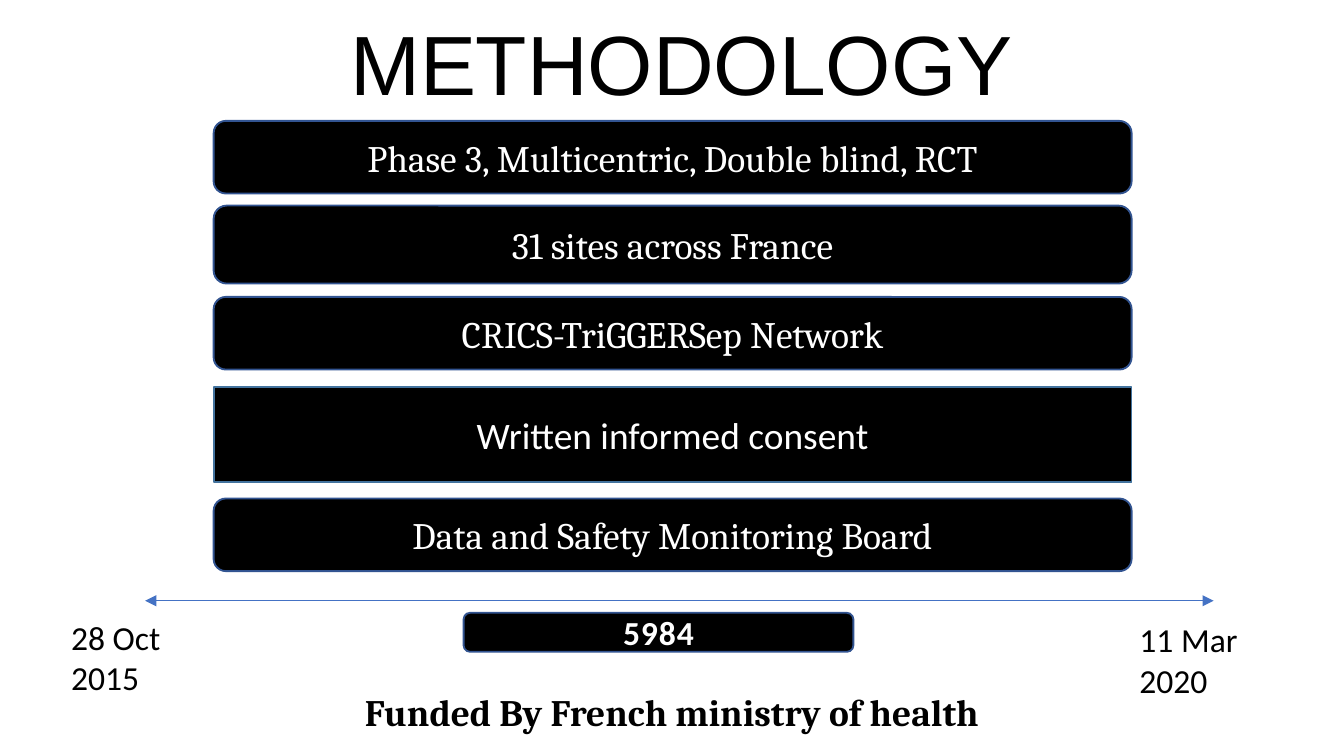
"""Build the METHODOLOGY slide of a clinical trial deck."""

from lxml.etree import SubElement
from pptx import Presentation
from pptx.dml.color import RGBColor
from pptx.enum.shapes import MSO_CONNECTOR, MSO_SHAPE
from pptx.enum.text import MSO_ANCHOR, MSO_AUTO_SIZE, PP_ALIGN
from pptx.oxml import parse_xml
from pptx.oxml.ns import nsdecls, qn
from pptx.util import Inches, Pt

COLORS = {
    "black": "000000",
    "white": "FFFFFF",
    "near_white": "FEFEFE",
    "navy": "325491",
    "steel": "43739E",
    "blue": "4472C4",
}


def write(shape, text, font, size, color, align=PP_ALIGN.CENTER, bold=False):
    """Put one formatted paragraph into a shape and return it."""
    shape.text_frame.word_wrap = True
    para = shape.text_frame.paragraphs[0]
    para.text = text
    para.alignment = align
    para.font.name = font
    para.font.size = Pt(size)
    para.font.bold = bold
    para.font.color.rgb = RGBColor.from_string(COLORS[color])
    return para


def add_bar(page, kind, left, top, width, height, line):
    """Add a black bar with a thin coloured outline."""
    bar = page.shapes.add_shape(
        kind, Inches(left), Inches(top), Inches(width), Inches(height)
    )
    bar.shadow.inherit = False
    bar.fill.solid()
    bar.fill.fore_color.rgb = RGBColor.from_string(COLORS["black"])
    bar.line.color.rgb = RGBColor.from_string(COLORS[line])
    bar.line.width = Pt(1)
    bar.text_frame.vertical_anchor = MSO_ANCHOR.MIDDLE
    return bar


deck = Presentation()
deck.slide_width = Inches(10)
deck.slide_height = Inches(10) * 9 // 16
page = deck.slides.add_slide(deck.slide_layouts[5])

title = page.shapes.title
title.left, title.top = Inches(1.32), Inches(0.07)
title.width, title.height = Inches(7.5), Inches(1.96)
frame = title.text_frame
frame.auto_size = MSO_AUTO_SIZE.NONE
frame.vertical_anchor = MSO_ANCHOR.TOP
frame.margin_left = frame.margin_right = Inches(0.1)
frame.margin_top = frame.margin_bottom = Inches(0.1)
write(title, "METHODOLOGY", "Arial", 45, "black").line_spacing = 0.9

rounded, square = MSO_SHAPE.ROUNDED_RECTANGLE, MSO_SHAPE.RECTANGLE
for text, kind, top, height, line, font in [
    ("Phase 3, Multicentric, Double blind, RCT", rounded, 0.9, 0.54, "navy", "Cambria"),
    ("31 sites across France", rounded, 1.53, 0.58, "navy", "Cambria"),
    ("CRICS-TriGGERSep Network", rounded, 2.21, 0.54, "navy", "Cambria"),
    ("Written informed consent", square, 2.88, 0.71, "steel", "Calibri"),
    ("Data and Safety Monitoring Board", rounded, 3.71, 0.54, "navy", "Cambria"),
]:
    bar = add_bar(page, kind, 1.59, top, 6.83, height, line)
    write(bar, text, font, 20, "white")

timeline = page.shapes.add_connector(
    MSO_CONNECTOR.STRAIGHT, Inches(1.08), Inches(4.47), Inches(9.03), Inches(4.47)
)
timeline.line.color.rgb = RGBColor.from_string(COLORS["blue"])
timeline.line.width = Pt(0.5)
outline = timeline.line._get_or_add_ln()
for end in ("a:headEnd", "a:tailEnd"):
    SubElement(outline, qn(end), type="triangle")
SubElement(timeline._element.spPr, qn("a:effectLst"))

for text, left, top, width, height, font, size, align, bold in [
    ("28 Oct 2015", 0.43, 4.54, 1.29, 0.34, "Calibri", 18, PP_ALIGN.LEFT, False),
    ("11 Mar 2020", 8.38, 4.56, 1.29, 0.34, "Calibri", 18, PP_ALIGN.LEFT, False),
    ("Funded By French ministry of health", 1.32, 5.08, 7.36, 0.44, "Cambria", 20,
     PP_ALIGN.CENTER, True),
]:
    box = page.shapes.add_textbox(
        Inches(left), Inches(top), Inches(width), Inches(height)
    )
    box.text_frame.auto_size = MSO_AUTO_SIZE.SHAPE_TO_FIT_TEXT
    write(box, text, font, size, "black", align, bold)

patients = add_bar(page, rounded, 3.45, 4.56, 2.9, 0.29, "navy")
count = write(patients, "5984", "Calibri", 18, "near_white", bold=True)
properties = count.runs[0].font._element
properties.set("spc", "50")
properties.insert(0, parse_xml(
    f'<a:ln {nsdecls("a")} w="{Pt(0.75)}"><a:solidFill>'
    f'<a:srgbClr val="{COLORS["blue"]}"/></a:solidFill></a:ln>'
))

deck.save("out.pptx")
